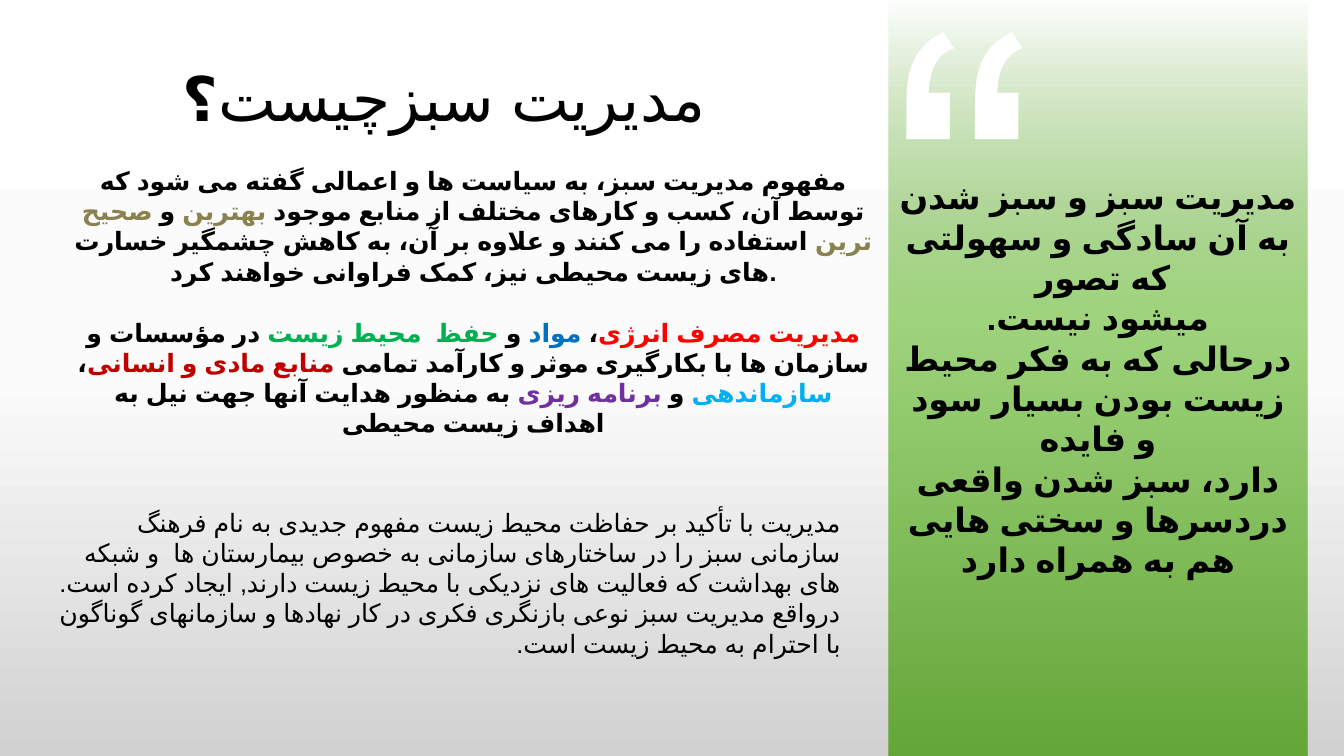
from dataclasses import dataclass

from lxml.etree import SubElement
from pptx import Presentation
from pptx.dml.color import RGBColor
from pptx.enum.lang import MSO_LANGUAGE_ID
from pptx.enum.shapes import MSO_SHAPE
from pptx.enum.text import MSO_ANCHOR, PP_ALIGN
from pptx.oxml.ns import qn
from pptx.util import Inches, Pt


@dataclass(frozen=True)
class Theme:
    """Colours, font and type sizes of the slide."""
    font: str = "Arial"
    title: int = 44
    quote: int = 24
    body: int = 18
    gap: int = 22
    black: str = "000000"
    white: str = "FFFFFF"
    olive: str = "89814E"
    red: str = "FF0000"
    blue: str = "0070C0"
    green: str = "00B050"
    crimson: str = "C00000"
    sky: str = "00B0F0"
    purple: str = "7030A0"
    backdrop: tuple = ((0, "FFFFFF", 100), (50, "FBFBFB", 100), (100, "D1D1D1", 100))
    panel: tuple = ((0, "63A537", 0), (42, "9FD47D", 100), (100, "63A537", 100))


T = Theme()

QUOTE = [
    "مدیریت سبز و سبز شدن به آن سادگی و سهولتی که تصور ",
    "میشود نیست.",
    "درحالی که به فکر محیط زیست بودن بسیار سود و فایده",
    "دارد، سبز شدن واقعی دردسرها و سختی هایی هم به همراه دارد",
]
TITLE = [[("مدیریت سبزچیست", {}), ("؟", {"bold": True})]]
DEFINITION = [
    [
        ("مفهوم مدیریت سبز، به سیاست ها و اعمالی گفته می شود که توسط آن، "
         "کسب و کارهای مختلف از منابع موجود ", {}),
        ("بهترین", {"color": T.olive}),
        (" و ", {}),
        ("صحیح ترین ", {"color": T.olive}),
        ("استفاده را می کنند و علاوه بر آن، به کاهش چشمگیر خسارت های "
         "زیست محیطی نیز، کمک فراوانی خواهند کرد.", {}),
    ],
    [
        ("مدیریت مصرف انرژی", {"color": T.red}),
        ("، ", {}),
        ("مواد", {"color": T.blue}),
        (" و ", {}),
        ("حفظ  محیط زیست ", {"color": T.green}),
        ("در مؤسسات و سازمان ها با بکارگیری موثر و کارآمد تمامی ", {}),
        ("منابع مادی و انسانی", {"color": T.crimson}),
        ("، ", {}),
        ("سازماندهی", {"color": T.sky}),
        (" و ", {}),
        ("برنامه ریزی ", {"color": T.purple}),
        ("به منظور هدایت آنها جهت نیل به اهداف زیست محیطی", {}),
    ],
]
CULTURE = [
    "مدیریت با تأکید بر حفاظت محیط زیست مفهوم جدیدی به نام فرهنگ سازمانی سبز را "
    "در ساختارهای سازمانی به خصوص بیمارستان ها  و شبکه های بهداشت که فعالیت های "
    "نزدیکی با محیط زیست دارند, ایجاد کرده است.",
    "درواقع مدیریت سبز نوعی بازنگری فکری در کار نهادها و سازمانهای گوناگون "
    "با احترام به محیط زیست است.",
]


def set_gradient(fill, root, stops):
    """Give a fill a top-to-bottom gradient of (position, colour, opacity) stops."""
    fill.gradient()
    fill.gradient_angle = 270
    stop_list = next(root.iter(qn("a:gsLst")))
    for old in list(stop_list):
        stop_list.remove(old)
    for position, color, opacity in stops:
        stop = SubElement(stop_list, qn("a:gs"), pos=str(position * 1000))
        rgb = SubElement(stop, qn("a:srgbClr"), val=color)
        if opacity < 100:
            SubElement(rgb, qn("a:alpha"), val=str(opacity * 1000))


def add_run(p, text, size, color=T.black, bold=False):
    """Add one formatted Persian run to a paragraph."""
    r = p.add_run()
    r.text = text
    r.font.size = Pt(size)
    r.font.bold = bold
    r.font.name = T.font
    r.font.language_id = MSO_LANGUAGE_ID.FARSI
    r.font.color.rgb = RGBColor.from_string(color)
    SubElement(r.font._element, qn("a:cs"), typeface=T.font)


def write_text(sp, paragraphs, size, bold=False, align=PP_ALIGN.RIGHT,
               anchor=MSO_ANCHOR.TOP, rtl=True, gap=0):
    """Fill a shape with paragraphs, each a string or a list of (text, format)."""
    tf = sp.text_frame
    tf.word_wrap = True
    tf.vertical_anchor = anchor
    for i, runs in enumerate(paragraphs):
        p = tf.add_paragraph() if i else tf.paragraphs[0]
        p.alignment = align
        if rtl:
            p._p.get_or_add_pPr().set("rtl", "1")
        if i and gap:
            p.space_before = Pt(gap)
        for text, style in [(runs, {})] if isinstance(runs, str) else runs:
            add_run(p, text, size, **{"bold": bold, **style})


def add_text(s, box, paragraphs, size, **style):
    """Add a text box at (left, top, width, height)."""
    sp = s.shapes.add_textbox(*map(Inches, box))
    write_text(sp, paragraphs, size, **style)


def add_panel(s, box):
    """Add the green panel that holds the quotation."""
    sp = s.shapes.add_shape(MSO_SHAPE.RECTANGLE, *map(Inches, box))
    sp.shadow.inherit = False
    sp.line.fill.background()
    set_gradient(sp.fill, sp._element, T.panel)
    write_text(sp, QUOTE, T.quote, bold=True, align=PP_ALIGN.CENTER,
               anchor=MSO_ANCHOR.MIDDLE)


def curve(a, b, c, d, steps=10):
    """Return points along a cubic curve from a to d, without a."""
    points = []
    for i in range(1, steps + 1):
        t = i / steps
        u = 1 - t
        points.append(tuple(
            u**3 * w + 3 * u * u * t * x + 3 * u * t * t * y + t**3 * z
            for w, x, y, z in zip(a, b, c, d)))
    return points


def add_quote_marks(s, left, top, pitch):
    """Draw the pair of opening quotation marks as one outline."""
    mark = [
        (0.37, 0), (0.47, 0.16),
        *curve((0.47, 0.16), (0.38, 0.19), (0.33, 0.24), (0.29, 0.31)),
        *curve((0.29, 0.31), (0.25, 0.37), (0.23, 0.47), (0.22, 0.6)),
        (0.43, 0.6), (0.43, 1.06), (0, 1.06), (0, 0.7),
        *curve((0, 0.7), (0, 0.5), (0.03, 0.36), (0.08, 0.27)),
        *curve((0.08, 0.27), (0.14, 0.15), (0.23, 0.06), (0.37, 0)),
    ]
    first, second = (
        [(Inches(left + dx + x), Inches(top + y)) for x, y in mark]
        for dx in (0, pitch))
    outline = s.shapes.build_freeform(*first[0])
    outline.add_line_segments(first[1:])
    outline.move_to(*second[0])
    outline.add_line_segments(second[1:])
    sp = outline.convert_to_shape()
    sp.shadow.inherit = False
    sp.fill.solid()
    sp.fill.fore_color.rgb = RGBColor.from_string(T.white)
    sp.line.fill.background()


def main():
    """Build the slide and save it."""
    prs = Presentation()
    prs.slide_width, prs.slide_height = Inches(13.33), Inches(7.5)
    s = prs.slides.add_slide(prs.slide_layouts[6])
    set_gradient(s.background.fill, s._element, T.backdrop)
    add_panel(s, (8.81, 0, 4.16, 7.5))
    add_quote_marks(s, 8.99, 0.32, 0.68)
    add_text(s, (1.09, 0.54, 6.01, 0.84), TITLE, T.title, anchor=MSO_ANCHOR.MIDDLE)
    add_text(s, (0.63, 1.59, 8.13, 2.22), DEFINITION, T.body, bold=True,
             align=PP_ALIGN.CENTER, rtl=False, gap=T.gap)
    add_text(s, (0.31, 4.98, 8.13, 1.62), CULTURE, T.body)
    prs.save("out.pptx")


if __name__ == "__main__":
    main()
